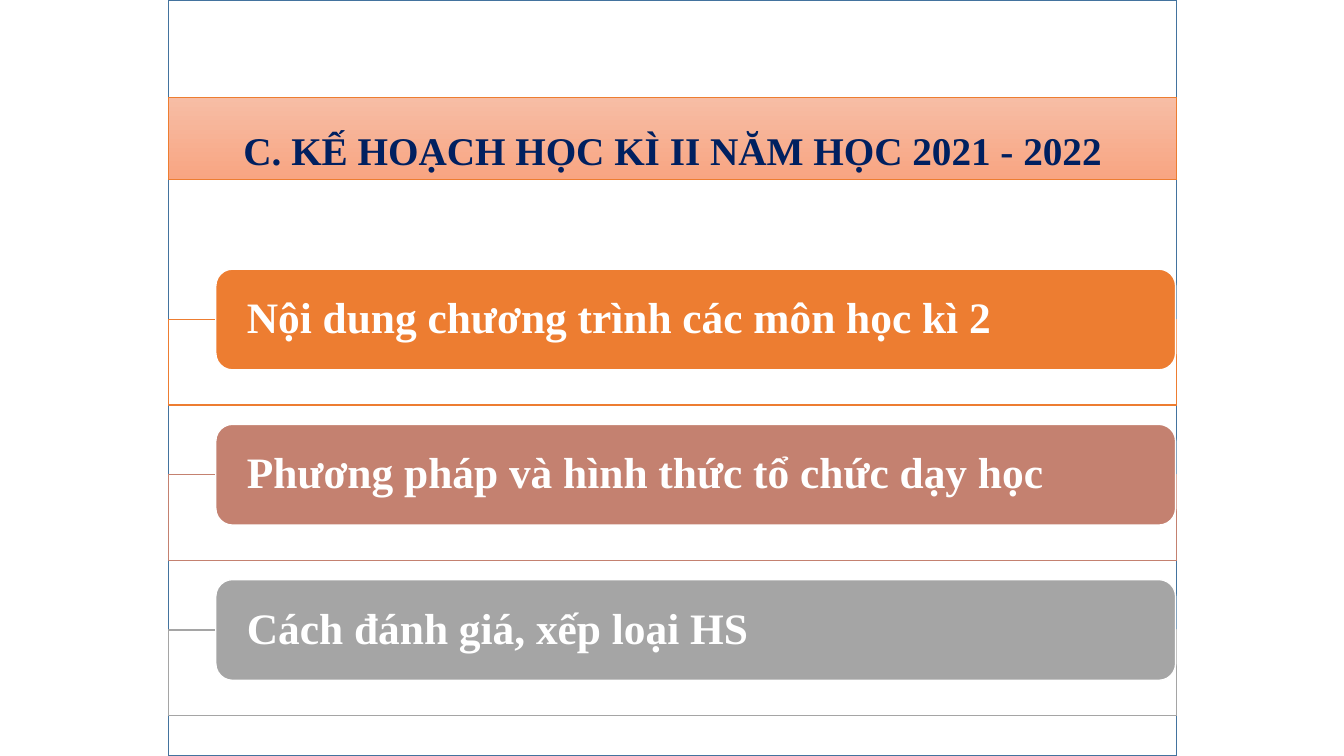
from lxml import etree
from pptx import Presentation
from pptx import util as u
from pptx.dml.color import RGBColor
from pptx.enum import shapes, text
from pptx.oxml.ns import qn

HUES = {
    "white": "FFFFFF", "blue": "43739E", "navy": "002060",
    "orange": "ED7D31", "rose": "C48170", "gray": "A5A5A5",
    "light": "F7BDA5", "deep": "F8A582",
}
ITEMS = [
    ("Nội dung chương trình các môn học kì 2", "orange"),
    ("Phương pháp và hình thức tổ chức dạy học", "rose"),
    ("Cách đánh giá, xếp loại HS", "gray"),
]
LEFT, WIDTH = 1.67, 10
TOP, STEP = 2.67, 1.54
FONT = {"name": "Times New Roman", "bold": True}


def rgb(hue):
    return RGBColor.from_string(HUES[hue])


def apply(target, values):
    for key, value in values.items():
        setattr(target, key, value)


def outline(shape, hue, width):
    shape.line.color.rgb = rgb(hue)
    shape.line.width = u.Pt(width)


def add_box(slide, kind, place, fill, line):
    box = slide.shapes.add_shape(kind, *map(u.Inches, place))
    box.shadow.inherit = False
    box.fill.solid()
    box.fill.fore_color.rgb = rgb(fill)
    outline(box, line, 1)
    return box


def write(shape, words, size, hue, frame, para):
    body = shape.text_frame
    body.text = words
    apply(body, {"word_wrap": True, "auto_size": text.MSO_AUTO_SIZE.NONE, **frame})
    line = body.paragraphs[0]
    apply(line, para)
    apply(line.font, {**FONT, "size": u.Pt(size)})
    line.font.color.rgb = rgb(hue)


def add_title(slide):
    title = slide.shapes.title
    spots = zip(("left", "top", "width", "height"), (LEFT, 0.97, WIDTH, 0.81))
    apply(title, {key: u.Inches(value) for key, value in spots})
    title.fill.gradient()
    title.fill.gradient_angle = 270
    for stop, hue, spot in zip(title.fill.gradient_stops, ("light", "deep"), (0, 1)):
        stop.color.rgb = rgb(hue)
        stop.position = spot
    outline(title, "orange", 0.5)
    write(title, "C. KẾ HOẠCH HỌC KÌ II NĂM HỌC 2021 - 2022", 28, "navy",
          {"vertical_anchor": text.MSO_ANCHOR.TOP},
          {"alignment": text.PP_ALIGN.CENTER, "line_spacing": 1.5})


def add_item(slide, top, words, hue):
    kinds = shapes.MSO_SHAPE
    frame = add_box(slide, kinds.RECTANGLE, (LEFT, top + 0.5, WIDTH, 0.85), "white", hue)
    color = frame.fill._xPr.find(qn("a:solidFill"))[0]
    etree.SubElement(color, qn("a:alpha")).set("val", "90000")
    bar = add_box(slide, kinds.ROUNDED_RECTANGLE, (2.14, top, 9.52, 1), hue, "white")
    side = u.Inches(0.26)
    write(bar, words, 31, "white",
          {"vertical_anchor": text.MSO_ANCHOR.MIDDLE, "margin_left": side,
           "margin_right": side, "margin_top": 0, "margin_bottom": 0},
          {"alignment": text.PP_ALIGN.LEFT, "line_spacing": 0.9})


def main():
    deck = Presentation()
    apply(deck, {"slide_width": u.Inches(13.33), "slide_height": u.Inches(7.5)})
    slide = deck.slides.add_slide(deck.slide_layouts[5])
    page = add_box(slide, shapes.MSO_SHAPE.RECTANGLE, (LEFT, 0, WIDTH, 7.5), "white", "blue")
    slide.shapes.title._element.addprevious(page._element)
    add_title(slide)
    for row, (words, hue) in enumerate(ITEMS):
        add_item(slide, TOP + row * STEP, words, hue)
    deck.save("out.pptx")


if __name__ == "__main__":
    main()
